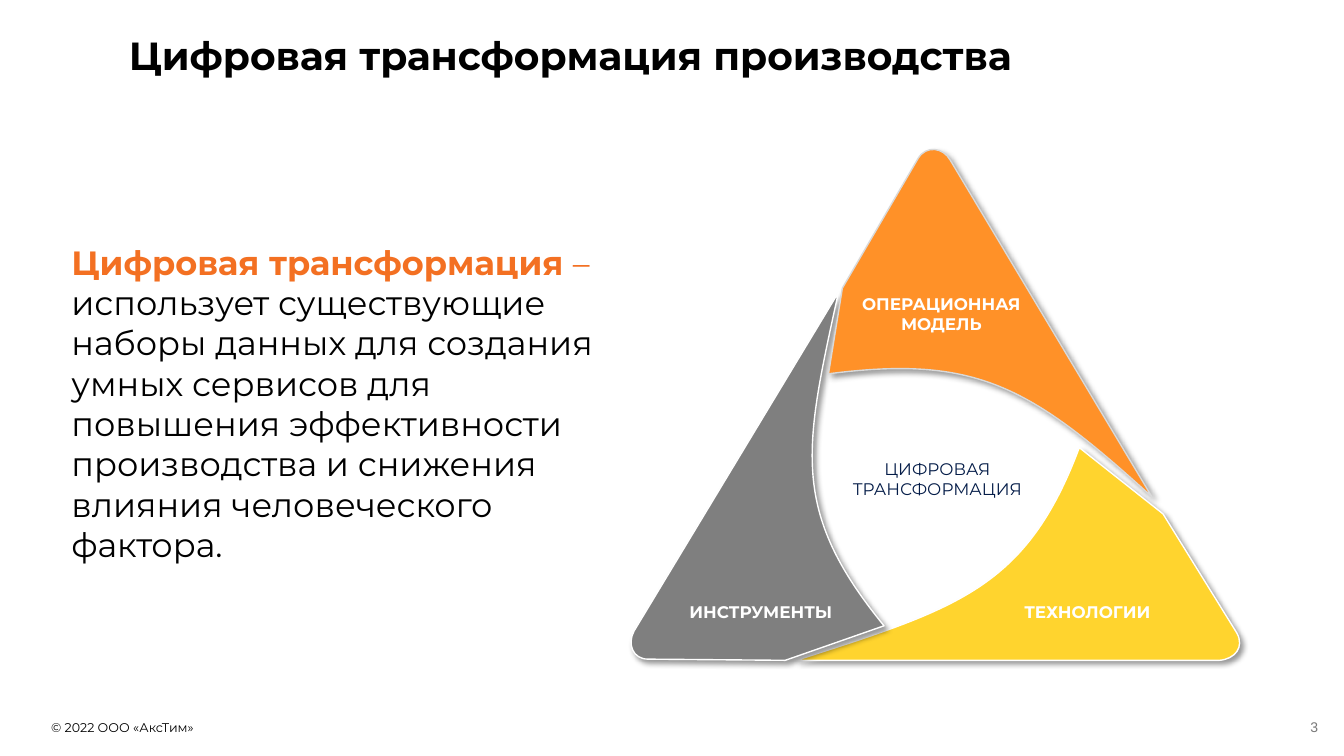
"""Build the slide about the digital transformation of production."""
from dataclasses import dataclass

import pptx
import pptx.dml.color
import pptx.enum.text
import pptx.oxml
import pptx.oxml.ns
import pptx.util

Cm = pptx.util.Cm
Pt = pptx.util.Pt
Align = pptx.enum.text.PP_ALIGN
Anchor = pptx.enum.text.MSO_ANCHOR


@dataclass(frozen=True)
class Theme:
    font: str = "Montserrat"
    number_font: str = "Arial"
    black: str = "000000"
    white: str = "FFFFFF"
    accent: str = "F37022"
    navy: str = "041C48"
    number: str = "797979"
    yellow: str = "FFD42E"
    gray: str = "7F7F7F"
    orange: str = "FF9128"
    pale: str = "D9D9D9"
    title_size: int = 28
    body_size: int = 24
    label_size: int = 12
    number_size: int = 10
    footer_size: int = 9


theme = Theme()


def fill_text(frame, lines, size, align=Align.LEFT, anchor=Anchor.TOP, margins=None, font=theme.font):
    """Write lines of (text, colour, bold) spans into a text frame."""
    frame.word_wrap = True
    frame.auto_size = pptx.enum.text.MSO_AUTO_SIZE.NONE
    frame.vertical_anchor = anchor
    if margins is not None:
        frame.margin_left = frame.margin_right = 0
        frame.margin_top = frame.margin_bottom = Cm(margins)
    for index, spans in enumerate(lines):
        para = frame.add_paragraph() if index else frame.paragraphs[0]
        para.alignment = align
        for text, color, bold in spans:
            span = para.add_run()
            span.text = text
            span.font.name = font
            span.font.size = Pt(size)
            span.font.bold = bold
            span.font.color.rgb = pptx.dml.color.RGBColor.from_string(color)


def bend(segments):
    """Turn three line segments into one cubic curve."""
    curve = pptx.oxml.parse_xml(f'<a:cubicBezTo {pptx.oxml.ns.nsdecls("a")}/>')
    segments[0].addprevious(curve)
    for segment in segments:
        curve.append(segment[0])
        segment.getparent().remove(segment)


deck = pptx.Presentation()
deck.slide_width = Cm(33.87)
deck.slide_height = Cm(19.05)
page = deck.slides.add_slide(deck.slide_layouts[5])

title = page.shapes.title
title.left, title.top, title.width, title.height = Cm(3.25), Cm(0.97), Cm(30), Cm(2.06)
fill_text(title.text_frame, [[("Цифровая трансформация производства", theme.black, True)]],
          theme.title_size, margins=0.13)
title.text_frame.paragraphs[0].line_spacing = 0.7

definition = page.shapes.add_textbox(Cm(1.55), Cm(6.01), Cm(14.5), Cm(8.28))
fill_text(definition.text_frame, [[
    ("Цифровая трансформация ", theme.accent, True),
    ("–", theme.accent, False),
    (" использует существующие наборы данных для создания умных сервисов для повышения "
     "эффективности производства и снижения влияния человеческого фактора.", theme.black, False),
]], theme.body_size, anchor=Anchor.MIDDLE)

triangle = page.shapes.add_group_shape()
sectors = [
    (theme.yellow, theme.white,
     [(20.07, 16.64), (24.08, 15.34), (25.86, 14.86), (27.2, 11.28)],
     (29.31, 12.95),
     [(31.17, 15.95), (31.37, 16.31), (31.12, 16.61), (30.73, 16.64)]),
    (theme.gray, theme.white,
     [(21.13, 7.37), (20.27, 11.3), (19.89, 12.85), (22.28, 15.77)],
     (19.79, 16.64),
     [(16.33, 16.61), (15.95, 16.61), (15.8, 16.23), (15.98, 15.9)]),
    (theme.orange, theme.pale,
     [(29.03, 12.52), (25.96, 9.73), (24.61, 8.94), (20.88, 9.42)],
     (21.23, 7.26),
     [(23.14, 3.99), (23.34, 3.66), (23.77, 3.71), (23.95, 4.04)]),
]
for fill, line, inner_edge, notch, corner in sectors:
    start, *outline = [(Cm(x), Cm(y)) for x, y in [*inner_edge, notch, *corner]]
    builder = triangle.shapes.build_freeform(*start)
    builder.add_line_segments(outline, close=True)
    sector = builder.convert_to_shape()
    segments = sector._element.findall(".//" + pptx.oxml.ns.qn("a:lnTo"))
    bend(segments[:3])
    bend(segments[5:8])
    sector.fill.solid()
    sector.fill.fore_color.rgb = pptx.dml.color.RGBColor.from_string(fill)
    sector.line.color.rgb = pptx.dml.color.RGBColor.from_string(line)
    sector.line.width = Pt(1)
    sector._element.spPr.append(pptx.oxml.parse_xml(
        f'<a:effectLst {pptx.oxml.ns.nsdecls("a")}>'
        f'<a:outerShdw blurRad="{Pt(4)}" dist="{Pt(3)}" dir="2700000" algn="tl" rotWithShape="0">'
        f'<a:srgbClr val="{theme.black}"><a:alpha val="40000"/></a:srgbClr>'
        '</a:outerShdw></a:effectLst>'))

labels = [("ИНСТРУМЕНТЫ", 16.23, 14.96), ("ТЕХНОЛОГИИ", 24.46, 14.96), ("ОПЕРАЦИОННАЯ МОДЕЛЬ", 20.78, 7.45)]
for text, left, top in labels:
    label = triangle.shapes.add_textbox(Cm(left), Cm(top), Cm(5.89), Cm(0.91))
    fill_text(label.text_frame, [[(text, theme.white, True)]], theme.label_size,
              Align.CENTER, Anchor.MIDDLE, 0)

center = triangle.shapes.add_textbox(Cm(21.16), Cm(11.56), Cm(4.93), Cm(1.32))
fill_text(center.text_frame,
          [[(text, theme.navy, False)] for text in ("ЦИФРОВАЯ", "ТРАНСФОРМАЦИЯ")],
          theme.label_size, Align.CENTER, margins=0)

footer = page.shapes.add_textbox(Cm(1.04), Cm(18.01), Cm(8.5), Cm(0.64))
fill_text(footer.text_frame, [[("© 2022 ООО «АксТим»", theme.black, False)]], theme.footer_size)

number = page.shapes.add_textbox(Cm(32.25), Cm(18), Cm(0.97), Cm(0.66))
fill_text(number.text_frame, [[("3", theme.number, False)]], theme.number_size,
          Align.RIGHT, Anchor.MIDDLE, 0, theme.number_font)

deck.save("out.pptx")
